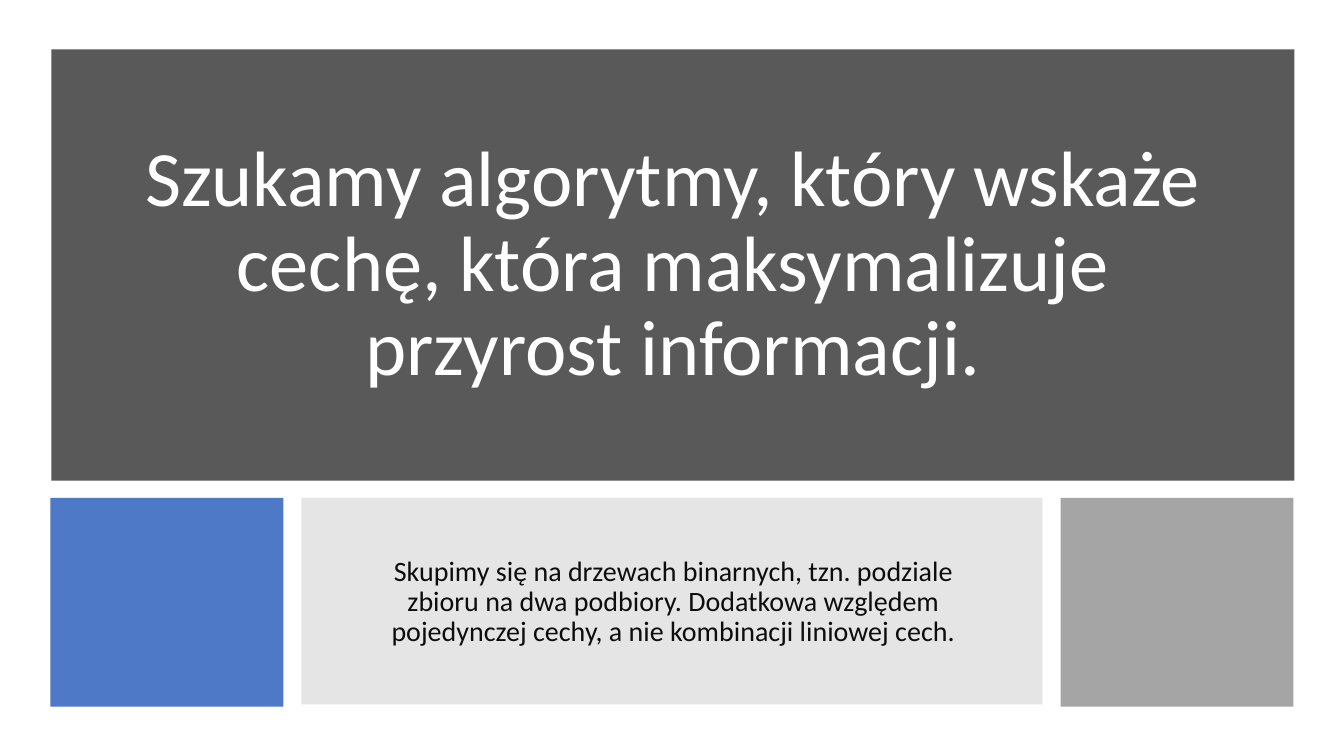
from lxml import etree
from pptx import Presentation
from pptx.dml.color import RGBColor
from pptx.enum.shapes import MSO_SHAPE
from pptx.enum.text import MSO_ANCHOR, MSO_AUTO_SIZE, PP_ALIGN
from pptx.oxml.ns import qn
from pptx.util import Inches, Pt

RECTANGLE = MSO_SHAPE.RECTANGLE
MIDDLE = MSO_ANCHOR.MIDDLE
NO_AUTOFIT = MSO_AUTO_SIZE.NONE
CENTER = PP_ALIGN.CENTER


def paint(color_format, color):
    color_format.rgb = RGBColor.from_string(color)


def write_text(shape, text, *, font, size, color, space_before=0):
    frame = shape.text_frame
    frame.word_wrap = True
    frame.auto_size = NO_AUTOFIT
    frame.vertical_anchor = MIDDLE
    paragraph = frame.paragraphs[0]
    paragraph.alignment = CENTER
    paragraph.line_spacing = 0.9
    paragraph.space_before = Pt(space_before)
    run = paragraph.add_run()
    run.text = text
    run.font.name = font
    run.font.size = Pt(size)
    paint(run.font.color, color)


class SlideBuilder:
    font = "Calibri"

    def __init__(self, presentation):
        self.width = presentation.slide_width
        self.height = presentation.slide_height
        self.slide = presentation.slides.add_slide(presentation.slide_layouts[5])

    def box(self, left, top, width, height):
        return (
            round(self.width * left / 100),
            round(self.height * top / 100),
            round(self.width * width / 100),
            round(self.height * height / 100),
        )

    def panel(self, box, color, opacity=100):
        shape = self.slide.shapes.add_shape(RECTANGLE, *self.box(*box))
        shape.shadow.inherit = False
        shape.line.fill.background()
        shape.fill.solid()
        paint(shape.fill.fore_color, color)
        if opacity < 100:
            color_element = next(shape.element.spPr.iter(qn("a:srgbClr")))
            alpha = etree.SubElement(color_element, qn("a:alpha"))
            alpha.set("val", str(opacity * 1000))

    def title(self, box, text, **text_format):
        title = self.slide.shapes.title
        title.left, title.top, title.width, title.height = self.box(*box)
        write_text(title, text, font=self.font, **text_format)
        title.element.getparent().append(title.element)

    def body(self, box, text, **text_format):
        shape = self.slide.shapes.add_textbox(*self.box(*box))
        write_text(shape, text, font=self.font, **text_format)


def main():
    presentation = Presentation()
    presentation.slide_width = Inches(13.333)
    presentation.slide_height = Inches(7.5)
    builder = SlideBuilder(presentation)

    builder.panel((3.83, 6.53, 92.48, 57.07), "595959")
    builder.title(
        (9, 16, 82.13, 38.27),
        "Szukamy algorytmy, który wskaże cechę, która maksymalizuje przyrost informacji.",
        size=56,
        color="FFFFFF",
    )

    left, top, gap = 3.75, 65.87, 1.35
    for width, height, color, opacity in (
        (17.33, 27.6, "4472C4", 95),
        (55.13, 27.33, "7F7F7F", 20),
        (17.33, 27.6, "A5A5A5", 100),
    ):
        builder.panel((left, top, width, height), color, opacity)
        left += width + gap

    builder.body(
        (26.48, 70.67, 47.25, 18),
        "Skupimy się na drzewach binarnych, tzn. podziale zbioru na dwa podbiory. "
        "Dodatkowa względem pojedynczej cechy, a nie kombinacji liniowej cech.",
        size=20,
        color="0D0D0D",
        space_before=10,
    )
    presentation.save("out.pptx")


if __name__ == "__main__":
    main()
